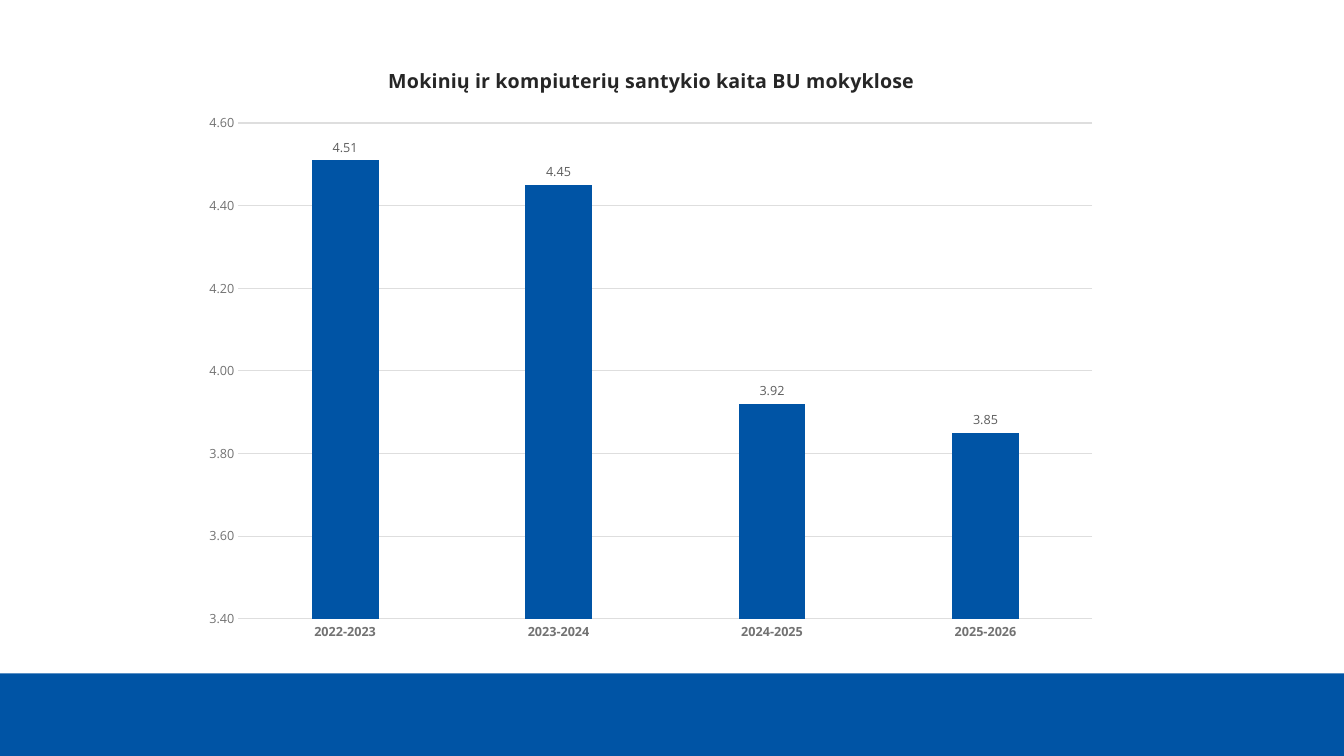
import pptx
import pptx.chart.data
import pptx.dml.color
import pptx.enum.chart
import pptx.enum.shapes
import pptx.oxml
import pptx.oxml.ns
import pptx.util
from pptx.util import Cm

COLORS = {
    "blue": "0054A5",
    "title": "262626",
    "axis": "727272",
    "label": "5C5C5C",
    "grid": "DEDEDE",
}
FONT = "Open Sans"
TITLE = "Mokinių ir kompiuterių santykio kaita BU mokyklose"
RATIOS = {
    "2022-2023": 4.51,
    "2023-2024": 4.45,
    "2024-2025": 3.92,
    "2025-2026": 3.85,
}
PLOT_AREA = {"x": 0.05, "y": 0.13, "w": 0.93, "h": 0.82}


def color(name):
    return pptx.dml.color.RGBColor.from_string(COLORS[name])


def style_font(font, size, color_name, bold=False):
    font.name = FONT
    font.size = pptx.util.Pt(size)
    font.bold = bold
    font.color.rgb = color(color_name)


def style_line(line):
    line.color.rgb = color("grid")
    line.width = pptx.util.Pt(0.75)


def add_band(page, left, top, width, height):
    band = page.shapes.add_shape(
        pptx.enum.shapes.MSO_SHAPE.RECTANGLE, left, top, width, height
    )
    band.shadow.inherit = False
    band.fill.solid()
    band.fill.fore_color.rgb = color("blue")
    band.line.fill.background()


def place_plot_area(chart):
    plot_area = chart.element.find(".//" + pptx.oxml.ns.qn("c:plotArea"))
    for layout in plot_area.findall(pptx.oxml.ns.qn("c:layout")):
        plot_area.remove(layout)
    sizes = "".join(f'<c:{key} val="{value}"/>' for key, value in PLOT_AREA.items())
    layout = pptx.oxml.parse_xml(
        f'<c:layout {pptx.oxml.ns.nsdecls("c")}><c:manualLayout>'
        '<c:layoutTarget val="inner"/><c:xMode val="edge"/><c:yMode val="edge"/>'
        f"{sizes}</c:manualLayout></c:layout>"
    )
    plot_area.insert(0, layout)


def style_title(chart):
    chart.has_title = True
    frame = chart.chart_title.text_frame
    frame.text = TITLE
    style_font(frame.paragraphs[0].runs[0].font, 14, "title", True)
    chart.chart_title.include_in_layout = False


def style_axes(chart):
    for axis in (chart.category_axis, chart.value_axis):
        axis.major_tick_mark = pptx.enum.chart.XL_TICK_MARK.NONE
        axis.minor_tick_mark = pptx.enum.chart.XL_TICK_MARK.NONE
    years, ratios = chart.category_axis, chart.value_axis
    style_font(years.tick_labels.font, 9, "axis", True)
    style_line(years.format.line)
    style_font(ratios.tick_labels.font, 9, "axis")
    ratios.tick_labels.number_format = "0.00"
    ratios.tick_labels.number_format_is_linked = False
    ratios.minimum_scale = 3.4
    ratios.maximum_scale = 4.6
    ratios.major_unit = 0.2
    ratios.format.line.fill.background()
    ratios.has_major_gridlines = True
    style_line(ratios.major_gridlines.format.line)


def style_columns(plot):
    plot.gap_width = 219
    plot.overlap = -27
    plot.vary_by_categories = False
    series = plot.series[0]
    series.format.fill.solid()
    series.format.fill.fore_color.rgb = color("blue")
    labels = series.data_labels
    labels.show_value = True
    labels.number_format = "0.00"
    labels.number_format_is_linked = False
    labels.position = pptx.enum.chart.XL_LABEL_POSITION.OUTSIDE_END
    style_font(labels.font, 9, "label")


def add_column_chart(page, left, top, width, height):
    data = pptx.chart.data.CategoryChartData(number_format="0.00")
    data.categories = list(RATIOS)
    data.add_series(TITLE, list(RATIOS.values()))
    chart = page.shapes.add_chart(
        pptx.enum.chart.XL_CHART_TYPE.COLUMN_CLUSTERED, left, top, width, height, data
    ).chart
    style_font(chart.font, 10, "title")
    chart.has_legend = False
    style_title(chart)
    style_axes(chart)
    style_columns(chart.plots[0])
    place_plot_area(chart)


def main():
    deck = pptx.Presentation()
    deck.slide_width = Cm(33.87)
    deck.slide_height = Cm(19.05)
    page = deck.slides.add_slide(deck.slide_layouts[6])
    add_band(page, 0, Cm(16.97), deck.slide_width, Cm(2.08))
    add_column_chart(page, Cm(4.85), Cm(1.12), Cm(23.14), Cm(15.24))
    deck.save("out.pptx")


if __name__ == "__main__":
    main()
